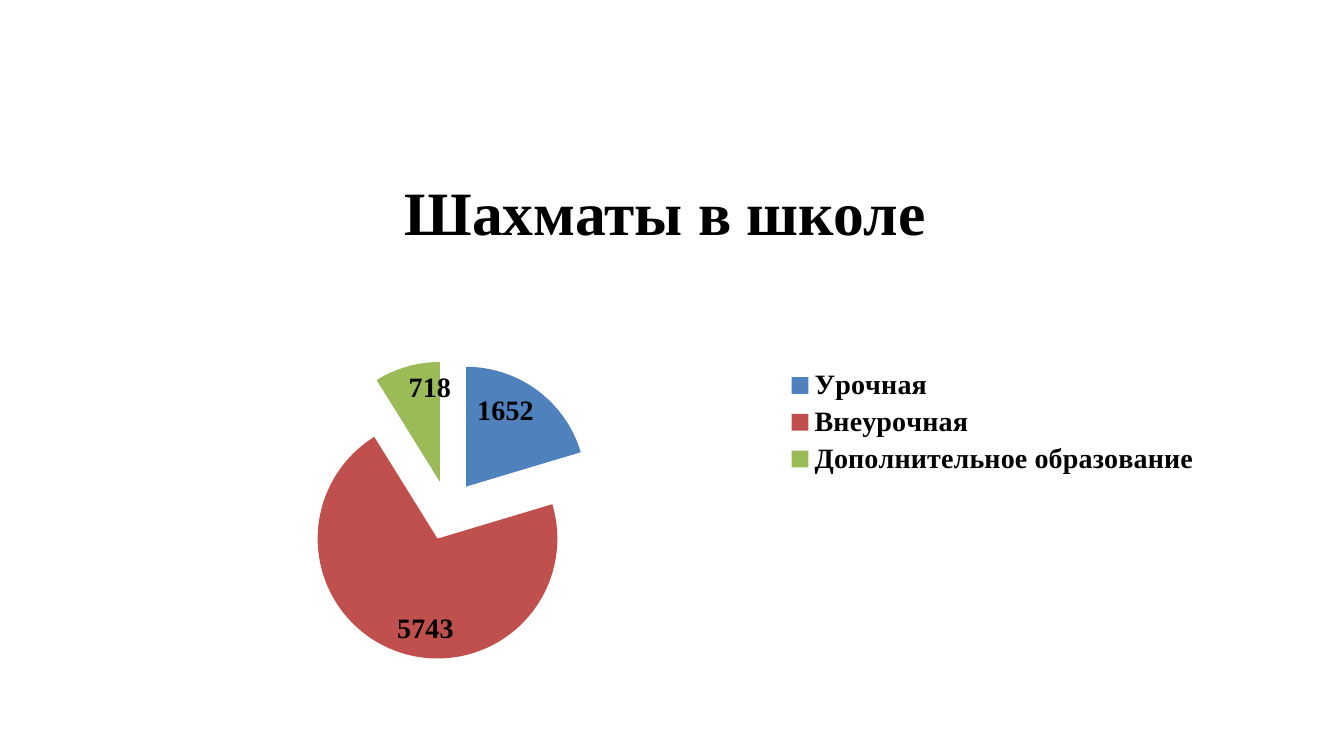
import pptx
import pptx.chart.data
import pptx.dml.color
import pptx.enum.chart
import pptx.enum.text
import pptx.oxml
import pptx.oxml.ns
import pptx.util

PX = 9071  # EMU per pixel at 100.8 pixels to the inch
BLACK = pptx.dml.color.RGBColor(0x00, 0x00, 0x00)
BLUE = pptx.dml.color.RGBColor(0x4F, 0x81, 0xBD)
RED = pptx.dml.color.RGBColor(0xC0, 0x50, 0x4D)
GREEN = pptx.dml.color.RGBColor(0x9B, 0xBB, 0x59)
SERIF = "Times New Roman"


def style_font(font, size, name=SERIF, bold=True):
    font.name = name
    font.size = pptx.util.Pt(size)
    font.bold = bold
    font.color.rgb = BLACK


def manual_layout(x, y, width, height, target=""):
    """Return a c:layout element placed by fractions of the chart area."""
    return pptx.oxml.parse_xml(
        f'<c:layout {pptx.oxml.ns.nsdecls("c")}><c:manualLayout>{target}'
        '<c:xMode val="edge"/><c:yMode val="edge"/>'
        f'<c:x val="{x}"/><c:y val="{y}"/><c:w val="{width}"/><c:h val="{height}"/>'
        '</c:manualLayout></c:layout>')


deck = pptx.Presentation()
deck.slide_width = 1344 * PX
deck.slide_height = 756 * PX
page = deck.slides.add_slide(deck.slide_layouts[5])

title = page.shapes.title
title.left, title.top, title.width, title.height = [
    length * PX for length in (68, 148, 1210, 126)]
title.text_frame.word_wrap = True
title.text_frame.vertical_anchor = pptx.enum.text.MSO_ANCHOR.MIDDLE
para = title.text_frame.paragraphs[0]
para.alignment = pptx.enum.text.PP_ALIGN.CENTER
span = para.add_run()
span.text = "Шахматы в школе "
style_font(span.font, 44)

lessons = pptx.chart.data.CategoryChartData()
lessons.categories = ["Урочная ", "Внеурочная", "Дополнительное образование"]
lessons.add_series("Series 1", [1652, 5743, 718])
chart = page.shapes.add_chart(
    pptx.enum.chart.XL_CHART_TYPE.PIE,
    *[length * PX for length in (67, 314, 1210, 361)], lessons).chart
chart.has_title = False
style_font(chart.font, 10, "TeX Gyre Pagella", False)

chart.has_legend = True
chart.legend.position = pptx.enum.chart.XL_LEGEND_POSITION.RIGHT
chart.legend.include_in_layout = False
style_font(chart.legend.font, 20)

pie = chart.plots[0]
pie.vary_by_categories = True
series = pie.series[0]
for index, color in enumerate((BLUE, RED, GREEN)):
    fill = series.points[index].format.fill
    fill.solid()
    fill.fore_color.rgb = color

labels = series.data_labels
labels.show_value = True
labels.show_percentage = False
labels.position = pptx.enum.chart.XL_LABEL_POSITION.INSIDE_END
style_font(labels.font, 20)

explosion = pptx.oxml.parse_xml(
    f'<c:explosion {pptx.oxml.ns.nsdecls("c")} val="25"/>')
series._element.find(pptx.oxml.ns.qn("c:dPt")).addprevious(explosion)

plot_area = chart._chartSpace.chart.plotArea
legend = chart.legend._element
for parent in (plot_area, legend):
    for layout in parent.findall(pptx.oxml.ns.qn("c:layout")):
        parent.remove(layout)
plot_area.insert(0, manual_layout(
    0.19, 0.13, 0.25, 0.83, '<c:layoutTarget val="inner"/>'))
legend.find(pptx.oxml.ns.qn("c:legendPos")).addnext(
    manual_layout(0.59, 0.14, 0.35, 0.32))

deck.save("out.pptx")
